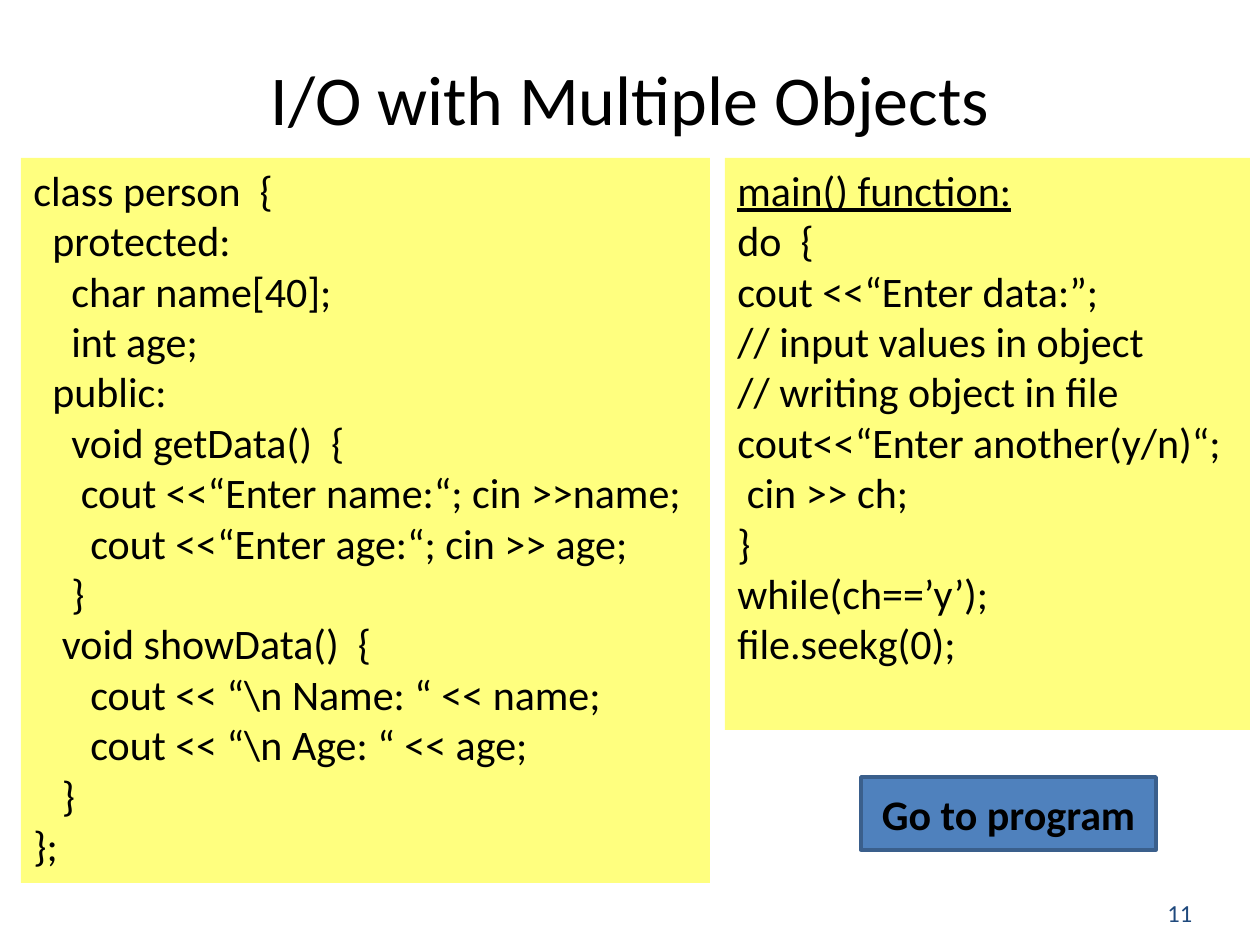
from pptx import Presentation
from pptx import util as u
from pptx.dml.color import RGBColor
from pptx.enum import shapes, text
from pptx.oxml.ns import qn
from lxml import etree

PX = 914400 / 126
SPACE_PT = 5.42  # width of one space in 24 pt Calibri

TITLE = "I/O with Multiple Objects"
BUTTON = "Go to program"
PAGE_NUMBER = "11"

# (indent in spaces, code)
CLASS_CODE = [
    (0, "class person  {"),
    (2, "protected:"),
    (4, "char name[40];"),
    (4, "int age;"),
    (2, "public:"),
    (4, "void getData()  {"),
    (5, "cout <<“Enter name:“; cin >>name;"),
    (6, "cout <<“Enter age:“; cin >> age;"),
    (4, "}"),
    (3, "void showData()  {"),
    (6, "cout << “\\n Name: “ << name;"),
    (6, "cout << “\\n Age: “ << age;"),
    (3, "}"),
    (0, "};"),
]
MAIN_CODE = [
    (0, "main() function:"),
    (0, "do  {"),
    (0, "cout <<“Enter data:”;"),
    (0, "// input values in object"),
    (0, "// writing object in file"),
    (0, "cout<<“Enter another(y/n)“;"),
    (1, "cin >> ch;"),
    (0, "}"),
    (0, "while(ch==’y’);"),
    (0, "file.seekg(0);"),
]

# left, top, width, height in px
TITLE_AREA = (63, 48, 1134, 98)
CLASS_AREA = (21, 158, 689, 725)
MAIN_AREA = (725, 158, 525, 572)
BUTTON_AREA = (861, 777, 295, 73)
NUMBER_AREA = (1155, 892, 84, 42)


def color(value):
    return RGBColor.from_string(value)


def emu(area):
    return [round(length * PX) for length in area]


def write(shape, lines, size=24, ink="000000", centred=False, middle=True, **font):
    """Fill the shape with one paragraph for each (indent, words) pair."""
    frame = shape.text_frame
    frame.word_wrap = True
    frame.vertical_anchor = text.MSO_ANCHOR.MIDDLE if middle else text.MSO_ANCHOR.TOP
    for number, (indent, words) in enumerate(lines):
        para = frame.add_paragraph() if number else frame.paragraphs[0]
        para.alignment = text.PP_ALIGN.CENTER if centred else text.PP_ALIGN.LEFT
        if indent:
            para._p.get_or_add_pPr().set("marL", str(u.Pt(indent * SPACE_PT)))
        span = para.add_run()
        span.text = words
        span.font.color.rgb = color(ink)
        for name, value in {"name": "Calibri", "size": u.Pt(size), **font}.items():
            setattr(span.font, name, value)


def add_box(page, area, fill):
    box = page.shapes.add_shape(shapes.MSO_SHAPE.RECTANGLE, *emu(area))
    box.shadow.inherit = False
    box.fill.solid()
    box.fill.fore_color.rgb = color(fill)
    return box


def add_code(page, area, lines):
    box = add_box(page, area, "FFFF00")
    box.line.fill.background()
    tint = box.fill._xPr.find(qn("a:solidFill"))[0]
    etree.SubElement(tint, qn("a:alpha")).set("val", "50000")
    write(box, lines, middle=False)
    return box


def main():
    deck = Presentation()
    deck.slide_width, deck.slide_height = u.Inches(10), u.Inches(7.5)
    page = deck.slides.add_slide(deck.slide_layouts[6])

    number = page.shapes.add_textbox(*emu(NUMBER_AREA))
    write(number, [(0, PAGE_NUMBER)], size=14, ink="1F497D")
    title = page.shapes.add_textbox(*emu(TITLE_AREA))
    write(title, [(0, TITLE)], size=40, centred=True)

    add_code(page, CLASS_AREA, CLASS_CODE)
    function = add_code(page, MAIN_AREA, MAIN_CODE)
    function.text_frame.paragraphs[0].runs[0].font.underline = True

    button = add_box(page, BUTTON_AREA, "4F81BD")
    button.line.color.rgb = color("3A5F8C")
    button.line.width = u.Pt(2)
    write(button, [(0, BUTTON)], centred=True, bold=True)

    deck.save("out.pptx")


if __name__ == "__main__":
    main()
